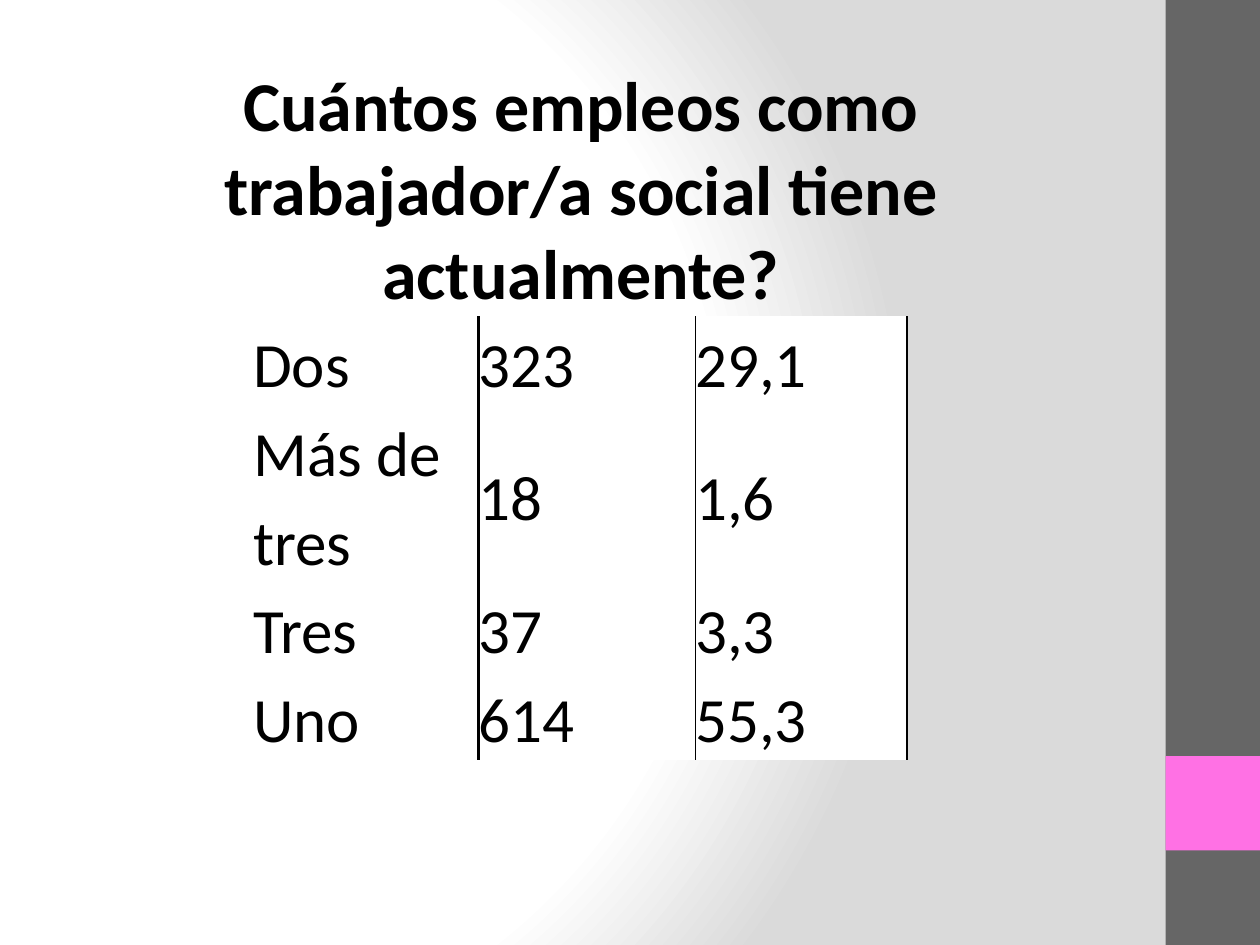
from dataclasses import dataclass

from pptx import Presentation
from pptx.dml.color import RGBColor as Rgb
from pptx.enum.shapes import MSO_SHAPE as Shape
from pptx.enum.text import MSO_ANCHOR as Anchor, MSO_AUTO_SIZE as AutoSize, PP_ALIGN as Align
from pptx.oxml import parse_xml
from pptx.oxml.ns import nsdecls
from pptx.util import Inches, Pt


@dataclass(frozen=True)
class Theme:
    font: str = "Calibri"
    title_size: int = 40
    table_size: int = 36
    ink: str = "000000"
    paper: str = "FFFFFF"
    shade: str = "DADADA"
    band: str = "666666"
    accent: str = "FF71E4"
    plain_table: str = "{2D5ABB26-0587-4C30-8999-92F81FD0307C}"


def assign(target, values):
    for name, value in values.items():
        setattr(target, name, value)


class SlideBuilder:
    def __init__(self, deck, theme):
        self.theme = theme
        self.page = deck.slides.add_slide(deck.slide_layouts[5])

    def style_text(self, para, size, bold=False):
        assign(para.font, {"name": self.theme.font, "size": Pt(size), "bold": bold})
        para.font.color.rgb = Rgb.from_string(self.theme.ink)

    def background(self):
        stops = ((0, self.theme.paper), (75, self.theme.paper), (100, self.theme.shade))
        stop_xml = "".join(
            f'<a:gs pos="{place * 1000}"><a:srgbClr val="{color}"/></a:gs>'
            for place, color in stops
        )
        self.page.element.cSld.insert(0, parse_xml(
            f'<p:bg {nsdecls("p", "a")}><p:bgPr><a:gradFill rotWithShape="1">'
            f'<a:gsLst>{stop_xml}</a:gsLst><a:path path="circle">'
            '<a:fillToRect l="20000" t="50000" r="100000" b="50000"/></a:path>'
            '</a:gradFill><a:effectLst/></p:bgPr></p:bg>'
        ))

    def block(self, left, top, width, height, color):
        box = self.page.shapes.add_shape(
            Shape.RECTANGLE, Inches(left), Inches(top), Inches(width), Inches(height)
        )
        box.shadow.inherit = False
        box.fill.solid()
        box.fill.fore_color.rgb = Rgb.from_string(color)
        box.line.fill.background()

    def title(self, text, left, top, width, height):
        box = self.page.shapes.title
        assign(box, {"left": Inches(left), "top": Inches(top),
                     "width": Inches(width), "height": Inches(height)})
        frame = box.text_frame
        assign(frame, {"text": text, "word_wrap": True, "auto_size": AutoSize.NONE,
                       "vertical_anchor": Anchor.BOTTOM})
        para = frame.paragraphs[0]
        para.alignment = Align.CENTER
        self.style_text(para, self.theme.title_size, bold=True)

    def border(self, cell, side, width):
        cell._tc.get_or_add_tcPr().append(parse_xml(
            f'<a:ln{side} {nsdecls("a")} w="{Pt(width)}"><a:solidFill>'
            f'<a:srgbClr val="{self.theme.ink}"/></a:solidFill></a:ln{side}>'
        ))

    def cell(self, cell, text, borders):
        margins = dict.fromkeys(("margin_left", "margin_right", "margin_top", "margin_bottom"), 0)
        anchor = Anchor.MIDDLE if borders else Anchor.TOP
        assign(cell, {"text": text, "vertical_anchor": anchor, **margins})
        for side, width in borders.items():
            self.border(cell, side, width)
        cell.fill.solid()
        cell.fill.fore_color.rgb = Rgb.from_string(self.theme.paper)
        para = cell.text_frame.paragraphs[0]
        assign(para, {"line_spacing": 1.15, "space_after": Pt(10)})
        self.style_text(para, self.theme.table_size)

    def table(self, rows, left, top, widths, heights, borders):
        frame = self.page.shapes.add_table(
            len(rows), len(widths), Inches(left), Inches(top),
            Inches(sum(widths)), Inches(sum(heights))
        )
        table = frame.table
        assign(table, {"first_row": False, "horz_banding": False})
        table._tbl.tblPr.find("{*}tableStyleId").text = self.theme.plain_table
        for column, width in zip(table.columns, widths):
            column.width = Inches(width)
        for row, height, values in zip(table.rows, heights, rows):
            row.height = Inches(height)
            for cell, text, sides in zip(row.cells, values, borders):
                self.cell(cell, text, sides)


def main():
    deck = Presentation()
    assign(deck, {"slide_width": Inches(10), "slide_height": Inches(7.5)})
    theme = Theme()
    slide = SlideBuilder(deck, theme)
    slide.background()
    slide.block(9.25, 0, 0.75, 7.5, theme.band)
    slide.block(9.25, 6, 0.75, 0.75, theme.accent)
    slide.table(
        [("Dos", "323", "29,1"), ("Más de tres", "18", "1,6"),
         ("Tres", "37", "3,3"), ("Uno", "614", "55,3")],
        left=2.01, top=2.51, widths=(1.79, 1.72, 1.68), heights=(0.7, 1.4, 0.7, 0.7),
        borders=({}, {"L": 2.25, "R": 1}, {"L": 1, "R": 1}),
    )
    slide.title("Cuántos empleos como trabajador/a social tiene actualmente?",
                0.83, 0, 7.56, 2.54)
    deck.save("out.pptx")


if __name__ == "__main__":
    main()
